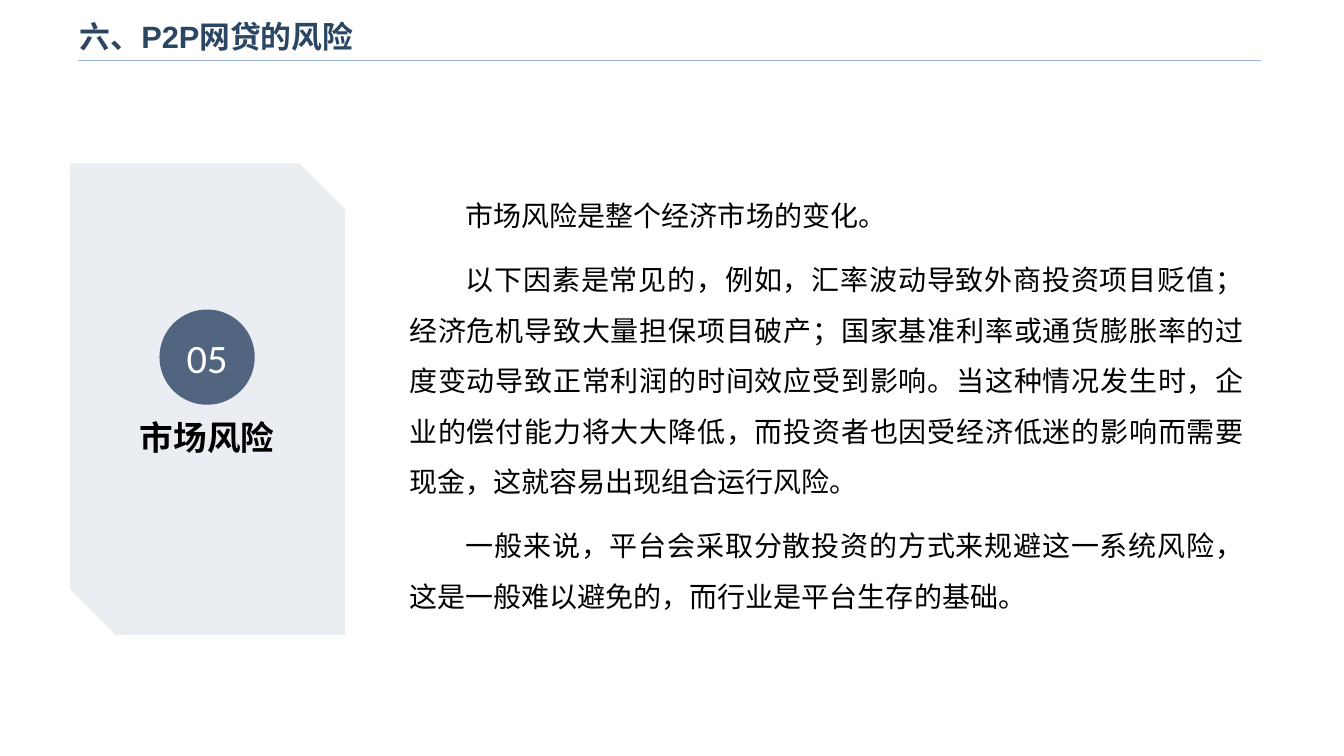
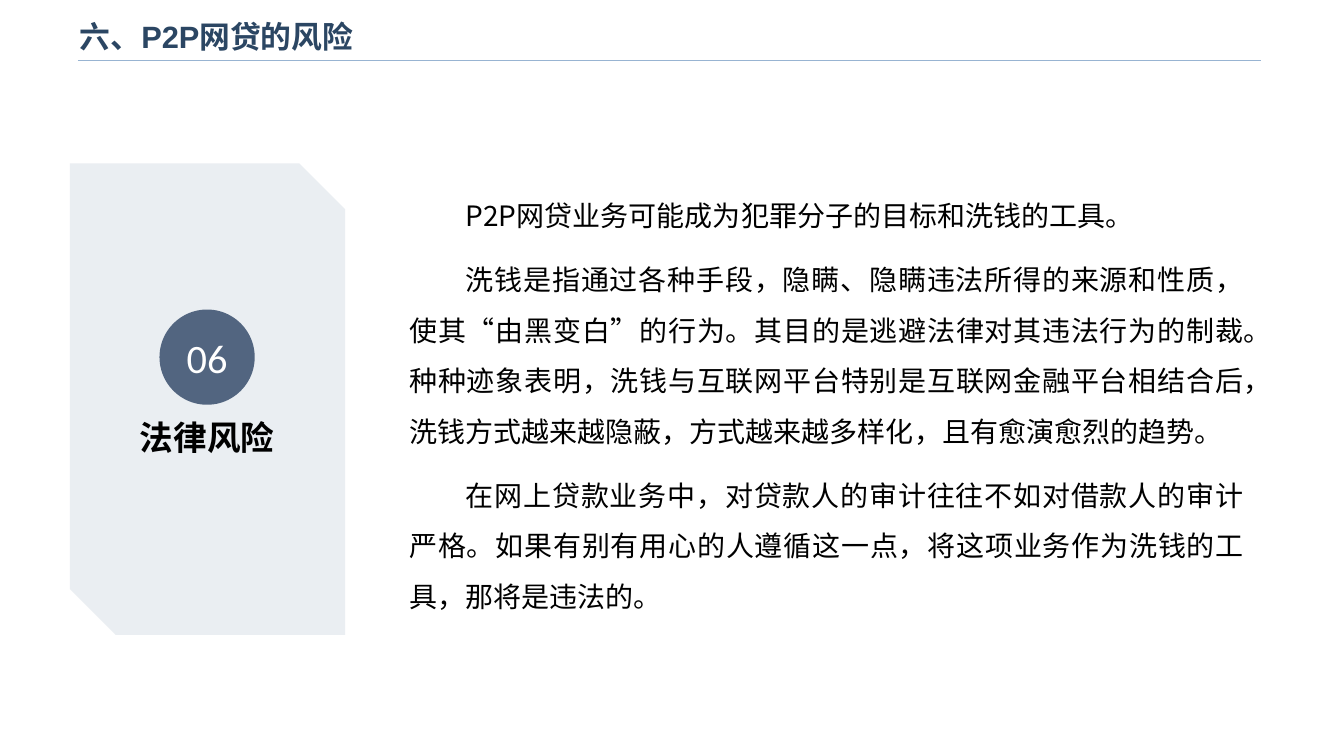
from lxml.etree import SubElement
from pptx import Presentation
from pptx.dml.color import RGBColor
from pptx.enum.lang import MSO_LANGUAGE_ID
from pptx.enum.shapes import MSO_CONNECTOR, MSO_SHAPE
from pptx.enum.text import MSO_ANCHOR, MSO_AUTO_SIZE, PP_ALIGN
from pptx.oxml.ns import qn
from pptx.util import Cm, Pt

NAVY, SLATE, PALE, RULE = "2B4663", "526580", "EAEEF2", "98B4D2"
BLACK, WHITE = "000000", "FFFFFF"
CJK = "Noto Sans CJK SC"
TITLE = "六、P2P网贷的风险"

TITLE_FONT = {"name": "Arial", "size": Pt(22), "bold": True}
LABEL_FONT = {"name": CJK, "size": Pt(24), "bold": True}
BODY_FONT = {"name": CJK, "size": Pt(20), "bold": False}
NUMBER_FONT = {"name": "Calibri", "size": Pt(28.8), "bold": False}
LEFT = {"alignment": PP_ALIGN.LEFT, "space_before": Pt(0)}
CENTER = {"alignment": PP_ALIGN.CENTER}
BODY = {"alignment": PP_ALIGN.JUSTIFY, "line_spacing": 1.5,
        "space_before": Pt(0), "space_after": Pt(10)}

RISKS = [
    ("05", "市场风险", [
        "市场风险是整个经济市场的变化。",
        "以下因素是常见的，例如，汇率波动导致外商投资项目贬值；经济危机导致大量担保项目破产；"
        "国家基准利率或通货膨胀率的过度变动导致正常利润的时间效应受到影响。当这种情况发生时，"
        "企业的偿付能力将大大降低，而投资者也因受经济低迷的影响而需要现金，这就容易出现组合运行风险。",
        "一般来说，平台会采取分散投资的方式来规避这一系统风险，这是一般难以避免的，"
        "而行业是平台生存的基础。",
    ]),
    ("06", "法律风险", [
        "P2P网贷业务可能成为犯罪分子的目标和洗钱的工具。",
        "洗钱是指通过各种手段，隐瞒、隐瞒违法所得的来源和性质，使其“由黑变白”的行为。"
        "其目的是逃避法律对其违法行为的制裁。种种迹象表明，洗钱与互联网平台特别是互联网金融平台相结合后，"
        "洗钱方式越来越隐蔽，方式越来越多样化，且有愈演愈烈的趋势。",
        "在网上贷款业务中，对贷款人的审计往往不如对借款人的审计严格。"
        "如果有别有用心的人遵循这一点，将这项业务作为洗钱的工具，那将是违法的。",
    ]),
]


def rgb(value):
    """Turn a hex string into a colour."""
    return RGBColor.from_string(value)


def apply(target, values):
    """Set every attribute in a dict of format values."""
    for name, value in values.items():
        setattr(target, name, value)


def place(sp, left, top, width, height):
    """Position a shape, in centimetres."""
    apply(sp, {"left": Cm(left), "top": Cm(top), "width": Cm(width), "height": Cm(height)})


def write(sp, lines, font, color, layout, anchor=MSO_ANCHOR.TOP, indent=None):
    """Fill a shape with paragraphs of one style."""
    tf = sp.text_frame
    apply(tf, {"word_wrap": True, "auto_size": MSO_AUTO_SIZE.NONE, "vertical_anchor": anchor})
    for i, line in enumerate(lines):
        p = tf.add_paragraph() if i else tf.paragraphs[0]
        if indent is not None:
            pPr = p._p.get_or_add_pPr()
            pPr.set("marL", "0")
            pPr.set("indent", str(Cm(indent)))
            SubElement(pPr, qn("a:buNone"))
        apply(p, layout)
        r = p.add_run()
        r.text = line
        apply(r.font, font)
        r.font.language_id = MSO_LANGUAGE_ID.SIMPLIFIED_CHINESE
        r.font.color.rgb = rgb(color)
        SubElement(r._r.get_or_add_rPr(), qn("a:ea"), typeface=CJK)


def add_rule(s):
    """Draw the thin line under the title."""
    line = s.shapes.add_connector(MSO_CONNECTOR.STRAIGHT, Cm(1.96), Cm(1.53), Cm(31.78), Cm(1.53))
    line.line.color.rgb = rgb(RULE)
    line.line.width = Pt(1)
    SubElement(line.element.spPr, qn("a:effectLst"))


def add_block(s, kind, fill, left, top, width, height):
    """Add a plain filled shape."""
    sp = s.shapes.add_shape(kind, Cm(left), Cm(top), Cm(width), Cm(height))
    sp.shadow.inherit = False
    sp.fill.solid()
    sp.fill.fore_color.rgb = rgb(fill)
    sp.line.fill.background()
    return sp


def add_card(s, number, label):
    """Add the side card with its numbered circle and label."""
    add_block(s, MSO_SHAPE.SNIP_2_DIAG_RECTANGLE, PALE, 1.76, 4.12, 6.94, 11.88)
    box = s.shapes.add_textbox(Cm(1.17), Cm(10.39), Cm(8.1), Cm(1.28))
    write(box, [label], LABEL_FONT, BLACK, CENTER)
    circle = add_block(s, MSO_SHAPE.OVAL, SLATE, 4.02, 7.8, 2.4, 2.4)
    write(circle, [number], NUMBER_FONT, WHITE, CENTER, MSO_ANCHOR.MIDDLE)


def add_risk_slide(prs, number, label, paragraphs):
    """Build one risk slide."""
    s = prs.slides.add_slide(prs.slide_layouts[1])
    add_rule(s)
    title, body = s.placeholders
    place(title, 1.76, 0.23, 27.2, 1.35)
    write(title, [TITLE], TITLE_FONT, NAVY, LEFT, MSO_ANCHOR.MIDDLE)
    place(body, 10.06, 4.45, 21.54, 11.23)
    write(body, paragraphs, BODY_FONT, BLACK, BODY, indent=1.42)
    add_card(s, number, label)


def main():
    """Build and save the presentation."""
    prs = Presentation()
    apply(prs, {"slide_width": Cm(33.87), "slide_height": Cm(19.05)})
    for risk in RISKS:
        add_risk_slide(prs, *risk)
    prs.save("out.pptx")


if __name__ == "__main__":
    main()
